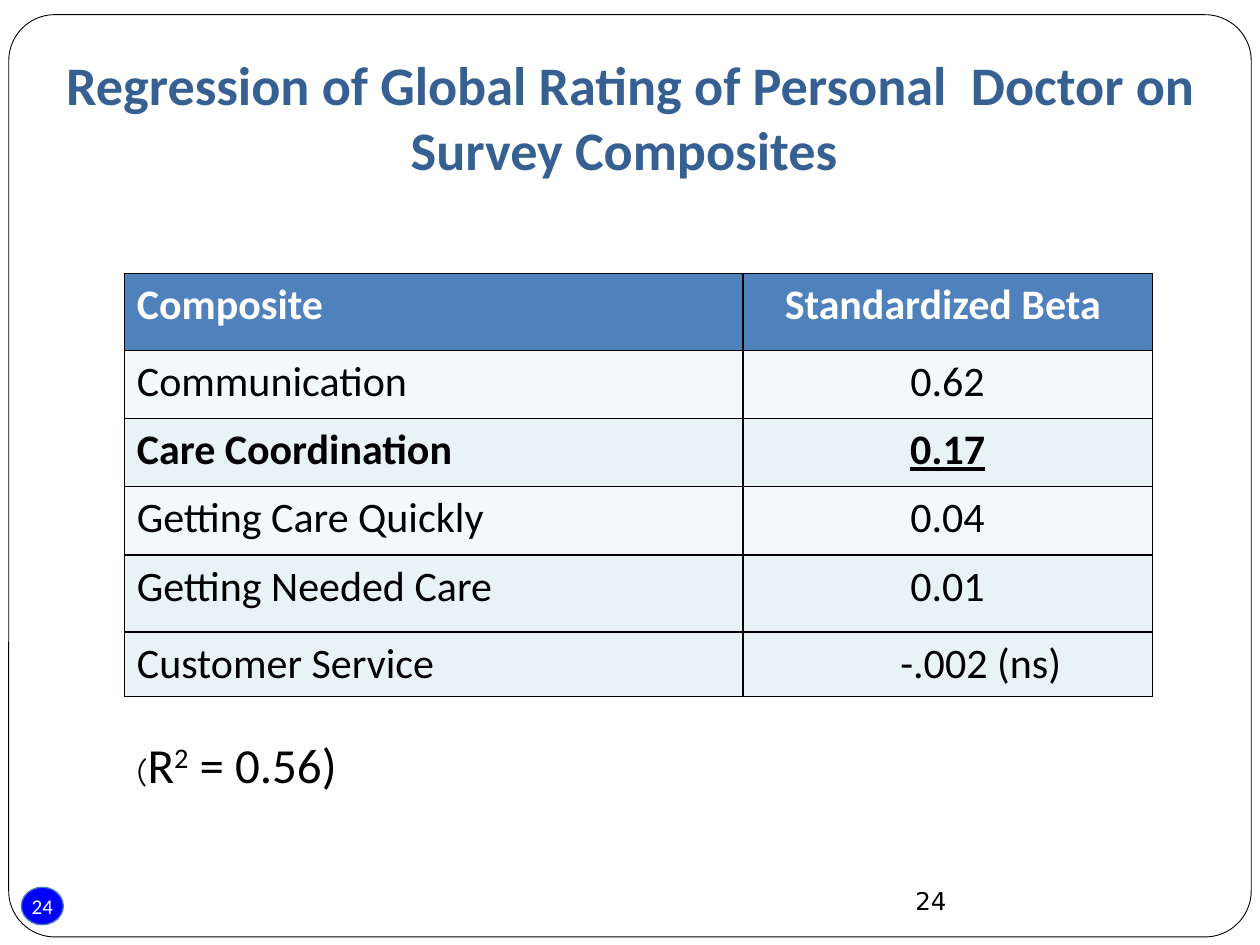
from lxml.etree import SubElement
from pptx import Presentation
from pptx.dml.color import RGBColor
from pptx.enum.shapes import MSO_SHAPE
from pptx.enum.text import MSO_ANCHOR, PP_ALIGN
from pptx.oxml.ns import qn
from pptx.util import Pt

COLORS = {
    "title": "376092",
    "header": "4F81BD",
    "light": "F3F9FA",
    "tint": "E7F3F4",
    "badge": "0000FF",
    "badge_line": "4B7EBC",
    "black": "000000",
    "white": "FFFFFF",
}

ROWS = [
    ("Composite", "Standardized Beta ", "header", 44),
    ("Communication", "0.62", "light", 39),
    ("Care Coordination", "0.17", "tint", 39),
    ("Getting Care Quickly", "0.04", "light", 39),
    ("Getting Needed Care", "0.01", "tint", 44),
    ("Customer Service", "-.002 (ns)", "tint", 37),
]
COLUMN_WIDTHS = (353.5, 234)
HIGHLIGHT = "Care Coordination"


def color(name):
    return RGBColor.from_string(COLORS[name])


def set_font(font, size, tone="black", name="Calibri", bold=False):
    font.name = name
    font.size = Pt(size)
    font.bold = bold
    font.color.rgb = color(tone)


def add_outline(slide, preset, box, line, width, fill=None):
    outline = slide.shapes.add_shape(preset, *map(Pt, box))
    outline.shadow.inherit = False
    if fill:
        outline.fill.solid()
        outline.fill.fore_color.rgb = color(fill)
    else:
        outline.fill.background()
    outline.line.color.rgb = color(line)
    outline.line.width = Pt(width)
    return outline


def add_label(slide, box, text="", anchor=MSO_ANCHOR.TOP):
    frame = slide.shapes.add_textbox(*map(Pt, box)).text_frame
    frame.word_wrap = True
    frame.vertical_anchor = anchor
    frame.text = text
    return frame.paragraphs[0]


def add_frame(slide):
    badge = add_outline(slide, MSO_SHAPE.OVAL, (12.2, 507, 24, 21.5), "badge_line", 0.75, "badge")
    frame = badge.text_frame
    frame.margin_left = frame.margin_right = frame.margin_top = frame.margin_bottom = 0
    frame.vertical_anchor = MSO_ANCHOR.MIDDLE
    frame.text = "24"
    number = frame.paragraphs[0]
    number.alignment = PP_ALIGN.CENTER
    set_font(number.font, 12, "white")

    border = add_outline(slide, MSO_SHAPE.ROUNDED_RECTANGLE, (5, 8.4, 710, 527), "black", 0.5)
    border.adjustments[0] = 0.05


def add_cell_borders(cell):
    properties = cell._tc.get_or_add_tcPr()
    for position, side in enumerate(("lnL", "lnR", "lnT", "lnB")):
        line = SubElement(properties, qn(f"a:{side}"), w=str(Pt(1)))
        fill = SubElement(line, qn("a:solidFill"))
        SubElement(fill, qn("a:srgbClr"), val=COLORS["black"])
        properties.insert(position, line)


def add_beta_table(slide):
    height = sum(row[-1] for row in ROWS)
    table = slide.shapes.add_table(
        len(ROWS), len(COLUMN_WIDTHS), Pt(71), Pt(156.2), Pt(sum(COLUMN_WIDTHS)), Pt(height)
    ).table
    for column, width in zip(table.columns, COLUMN_WIDTHS):
        column.width = Pt(width)
    for row, (composite, beta, fill, row_height) in zip(table.rows, ROWS):
        row.height = Pt(row_height)
        is_header = fill == "header"
        is_highlight = composite == HIGHLIGHT
        for cell, text in zip(row.cells, (composite, beta)):
            cell.text = text
            cell.fill.solid()
            cell.fill.fore_color.rgb = color(fill)
            add_cell_borders(cell)
            set_font(cell.text_frame.paragraphs[0].font, 24,
                     "white" if is_header else "black", bold=is_header or is_highlight)
        beta_text = row.cells[1].text_frame.paragraphs[0]
        beta_text.alignment = PP_ALIGN.CENTER
        beta_text.font.underline = is_highlight
    table.cell(len(ROWS) - 1, 1).margin_left = Pt(45)


def add_r_squared(slide):
    fit = add_label(slide, (71, 416, 368, 41))
    for text, size, name in (("(", 18, "Comic Neue"), ("R", 28, "Calibri"),
                             ("2", 28, "Calibri"), (" = 0.56)", 28, "Calibri")):
        run = fit.add_run()
        run.text = text
        set_font(run.font, size, name=name)
        if text == "2":
            run._r.get_or_add_rPr().set("baseline", "30000")


def main():
    presentation = Presentation()
    presentation.slide_width, presentation.slide_height = Pt(720), Pt(540)
    slide = presentation.slides.add_slide(presentation.slide_layouts[6])

    add_frame(slide)
    title = add_label(
        slide, (0, 21.6, 720, 90),
        "Regression of Global Rating of Personal  Doctor on Survey Composites ",
        MSO_ANCHOR.MIDDLE,
    )
    title.alignment = PP_ALIGN.CENTER
    set_font(title.font, 31, "title", bold=True)
    add_beta_table(slide)
    page_number = add_label(slide, (516, 502.5, 168, 37.5), "24")
    set_font(page_number.font, 14, name="DejaVu Sans")
    add_r_squared(slide)

    presentation.save("out.pptx")


if __name__ == "__main__":
    main()
